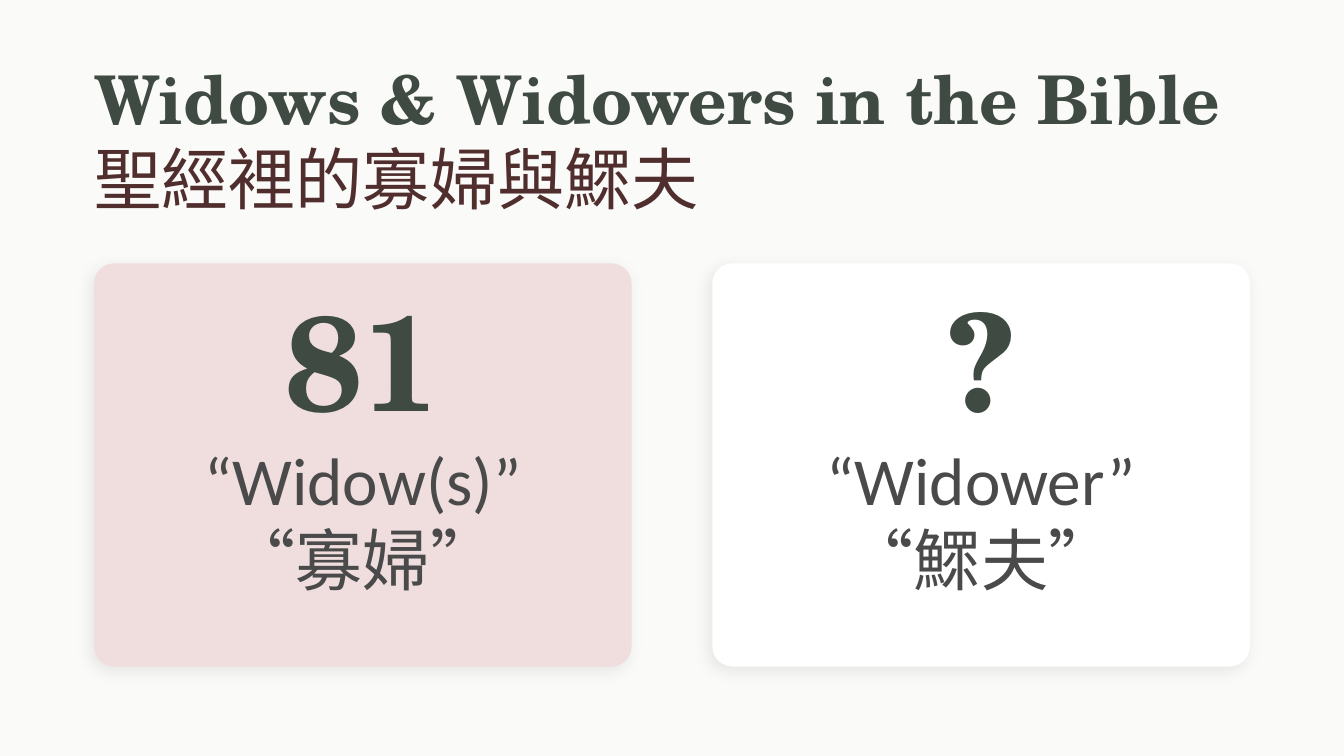
import lxml.etree
import pptx
import pptx.dml.color
import pptx.enum.shapes
import pptx.enum.text
import pptx.oxml.ns
import pptx.util

Pt = pptx.util.Pt
RGBColor = pptx.dml.color.RGBColor
ALIGN = pptx.enum.text.PP_ALIGN
ANCHOR = pptx.enum.text.MSO_ANCHOR
qn = pptx.oxml.ns.qn

PAPER = RGBColor(0xFA, 0xFA, 0xF8)
GREEN = RGBColor(0x3E, 0x4A, 0x42)
MAROON = RGBColor(0x50, 0x2E, 0x2E)
GREY = RGBColor(0x4A, 0x4A, 0x4A)
ROSE = RGBColor(0xF0, 0xDE, 0xDE)
WHITE = RGBColor(0xFF, 0xFF, 0xFF)

SERIF = "TeX Gyre Schola"
SANS = "Calibri"

MARGIN = 50.4
CARD_W, CARD_H = 288, 216
CARD_TOP = 141.1
CARD_STEP = 331.2


def add_text(slide, box, *lines, size=36, font=SANS, color=GREY, bold=False,
             align=ALIGN.LEFT, anchor=ANCHOR.MIDDLE):
    """Put one paragraph per line in a text box without insets."""
    tf = slide.shapes.add_textbox(*map(Pt, box)).text_frame
    tf.word_wrap = True
    tf.vertical_anchor = anchor
    tf.margin_left = tf.margin_top = tf.margin_right = tf.margin_bottom = 0
    for i, line in enumerate(lines):
        p = tf.paragraphs[0] if i == 0 else tf.add_paragraph()
        p.alignment = align
        r = p.add_run()
        r.text = line
        r.font.size = Pt(size)
        r.font.name = font
        r.font.bold = bold
        r.font.color.rgb = color


def add_soft_shadow(sp):
    """Give a shape a faint black shadow towards the lower left."""
    sp.shadow.inherit = False
    effects = sp._element.spPr.find(qn("a:effectLst"))
    shadow = lxml.etree.SubElement(
        effects, qn("a:outerShdw"), blurRad=str(Pt(8)), dist=str(Pt(3)),
        dir=str(135 * 60000), algn="bl", rotWithShape="0")
    black = lxml.etree.SubElement(shadow, qn("a:srgbClr"), val="000000")
    lxml.etree.SubElement(black, qn("a:alpha"), val="8000")


def add_heading(slide, box, english, chinese):
    x, y, w, h = box
    english_h = 46.8
    add_text(slide, (x, y, w, english_h), english,
             font=SERIF, color=GREEN, bold=True)
    add_text(slide, (x, y + english_h, w, h - english_h), chinese, color=MAROON)


def add_card(slide, box, fill, figure, *labels):
    x, y, w, h = box
    # Rounded panel
    sp = slide.shapes.add_shape(
        pptx.enum.shapes.MSO_SHAPE.ROUNDED_RECTANGLE, *map(Pt, box))
    sp.adjustments[0] = 0.05
    sp.fill.solid()
    sp.fill.fore_color.rgb = fill
    sp.line.fill.background()
    add_soft_shadow(sp)
    # Large figure, then its labels
    pad, figure_h, labels_h = 7.2, 86.4, 100.8
    add_text(slide, (x, y + pad, w, figure_h), figure, size=72, font=SERIF,
             color=GREEN, bold=True, align=ALIGN.CENTER)
    add_text(slide, (x, y + pad + figure_h, w, labels_h), *labels,
             align=ALIGN.CENTER, anchor=ANCHOR.TOP)


def main():
    prs = pptx.Presentation()
    prs.slide_width, prs.slide_height = Pt(720), Pt(405)
    slide = prs.slides.add_slide(prs.slide_layouts[6])
    slide.background.fill.solid()
    slide.background.fill.fore_color.rgb = PAPER

    add_heading(slide, (MARGIN, 28.8, 720 - 2 * MARGIN, 86.4),
                "Widows & Widowers in the Bible", "聖經裡的寡婦與鰥夫")

    cards = [
        (ROSE, "81", "“Widow(s)”", "“寡婦”"),
        (WHITE, "?", "“Widower”", "“鰥夫”"),
    ]
    for i, card in enumerate(cards):
        add_card(slide, (MARGIN + i * CARD_STEP, CARD_TOP, CARD_W, CARD_H), *card)

    prs.save("out.pptx")


if __name__ == "__main__":
    main()
